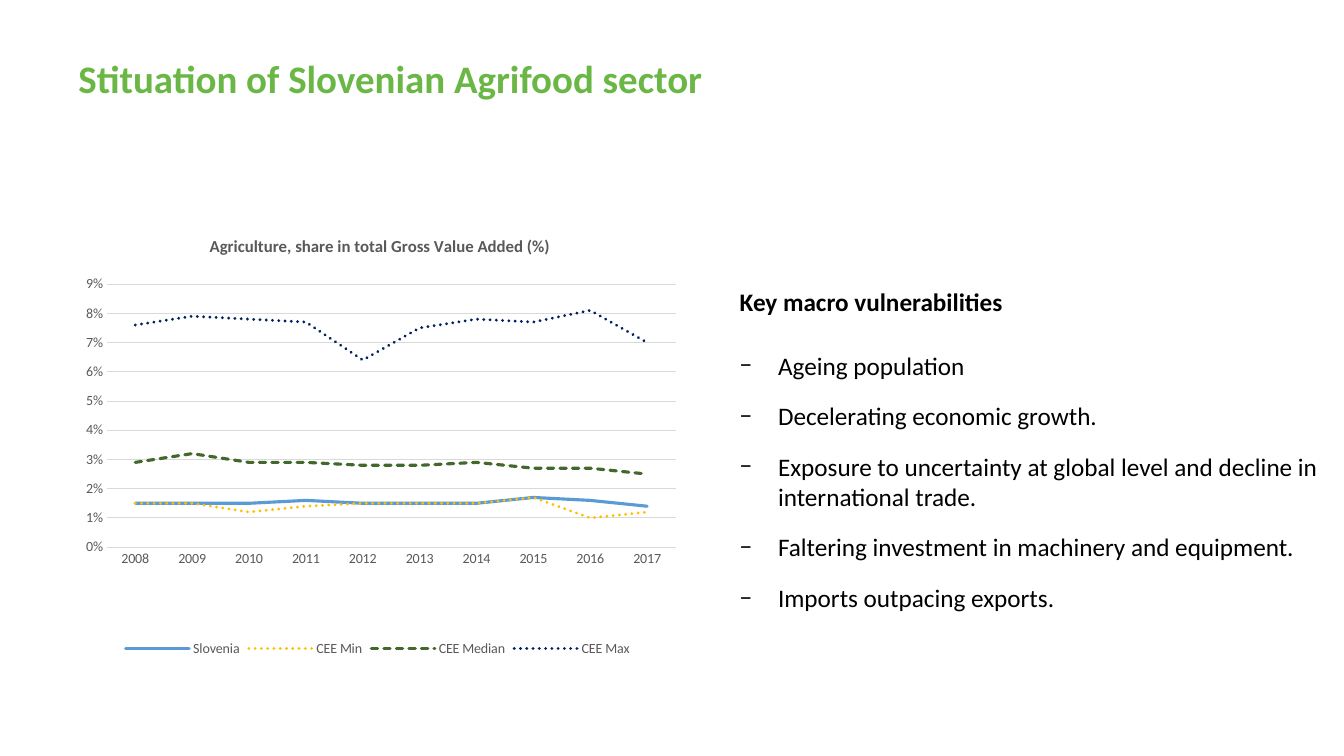
from lxml.etree import SubElement
from pptx import Presentation
from pptx.chart.data import CategoryChartData
from pptx.dml.color import RGBColor
from pptx.enum.chart import XL_CHART_TYPE, XL_LEGEND_POSITION, XL_TICK_MARK
from pptx.enum.dml import MSO_LINE
from pptx.enum.text import MSO_ANCHOR
from pptx.oxml import parse_xml
from pptx.oxml.ns import nsdecls, qn
from pptx.util import Inches, Pt

GREEN = RGBColor(0x6B, 0xB7, 0x45)
BLACK = RGBColor(0, 0, 0)
GREY = RGBColor(0x59, 0x59, 0x59)
RULE = RGBColor(0xD9, 0xD9, 0xD9)
BLUE = RGBColor(0x5B, 0x9B, 0xD5)
AMBER = RGBColor(0xFF, 0xC0, 0x00)
FOREST = RGBColor(0x43, 0x68, 0x2B)
NAVY = RGBColor(0x00, 0x20, 0x60)

YEARS = [str(year) for year in range(2008, 2018)]
SERIES = [
    ("Slovenia", BLUE, None,
     [0.015, 0.015, 0.015, 0.016, 0.015, 0.015, 0.015, 0.017, 0.016, 0.014]),
    ("CEE Min", AMBER, MSO_LINE.ROUND_DOT,
     [0.015, 0.015, 0.012, 0.014, 0.015, 0.015, 0.015, 0.017, 0.01, 0.012]),
    ("CEE Median", FOREST, MSO_LINE.SQUARE_DOT,
     [0.029, 0.032, 0.029, 0.029, 0.028, 0.028, 0.029, 0.027, 0.027, 0.025]),
    ("CEE Max", NAVY, MSO_LINE.ROUND_DOT,
     [0.076, 0.079, 0.078, 0.077, 0.064, 0.075, 0.078, 0.077, 0.081, 0.07]),
]
VULNERABILITIES = [
    "Ageing population",
    "Decelerating economic growth.",
    "Exposure to uncertainty at global level and decline in international trade.",
    "Faltering investment in machinery and equipment.",
    "Imports outpacing exports.",
]


def style_font(font, size, color, bold=False):
    font.name = "Calibri"
    font.size = Pt(size)
    font.color.rgb = color
    font.bold = bold


def write(para, text, size=18, color=BLACK, bold=False, line=1.0, before=0, bullet=None):
    para.line_spacing = line
    para.space_before = Pt(before)
    if bullet:
        properties = para._p.get_or_add_pPr()
        properties.set("marL", str(Inches(0.38)))
        properties.set("indent", str(-Inches(0.38)))
        SubElement(properties, qn("a:buFont")).set("typeface", "Calibri")
        SubElement(properties, qn("a:buChar")).set("char", bullet)
    span = para.add_run()
    span.text = text
    style_font(span.font, size, color, bold)


def manual_layout(**shares):
    modes = "".join(f'<c:{axis}Mode val="edge"/>' for axis in "xy")
    values = "".join(f'<c:{key} val="{value}"/>' for key, value in shares.items())
    target = '<c:layoutTarget val="inner"/>' if "w" in shares else ""
    return parse_xml(f'<c:layout {nsdecls("c")}><c:manualLayout>'
                     f'{target}{modes}{values}</c:manualLayout></c:layout>')


class SlideBuilder:
    def __init__(self, deck):
        self.width, self.height = deck.slide_width, deck.slide_height
        self.page = deck.slides.add_slide(deck.slide_layouts[6])

    def place(self, left, top, width, height):
        return (int(left * self.width), int(top * self.height),
                int(width * self.width), int(height * self.height))

    def text(self, area, paragraphs, anchor=MSO_ANCHOR.TOP):
        frame = self.page.shapes.add_textbox(*self.place(*area)).text_frame
        frame.word_wrap = True
        frame.vertical_anchor = anchor
        for index, (text, options) in enumerate(paragraphs):
            para = frame.add_paragraph() if index else frame.paragraphs[0]
            write(para, text, **options)

    def line_chart(self, area, title, categories, series):
        data = CategoryChartData(number_format="0%")
        data.categories = categories
        for name, _, _, values in series:
            data.add_series(name, values)
        chart = self.page.shapes.add_chart(
            XL_CHART_TYPE.LINE, *self.place(*area), data).chart
        style_font(chart.font, 10, BLACK)
        self.chart_title(chart, title)
        self.axes(chart)
        chart.has_legend = True
        chart.legend.position = XL_LEGEND_POSITION.BOTTOM
        chart.legend.include_in_layout = False
        style_font(chart.legend.font, 10, GREY)
        plot = chart.plots[0]
        plot.vary_by_categories = False
        for line, (_, color, dash, _) in zip(plot.series, series):
            line.smooth = False
            line.format.line.color.rgb = color
            line.format.line.width = Pt(2.25)
            if dash:
                line.format.line.dash_style = dash
        for outline in chart.element.xpath(".//c:ser/c:spPr/a:ln"):
            outline.set("cap", "rnd")
        plot_area = chart.element.xpath(".//c:plotArea")[0]
        for layout in plot_area.findall(qn("c:layout")):
            plot_area.remove(layout)
        plot_area.insert(0, manual_layout(x=0.082, y=0.157, w=0.878, h=0.589))

    def chart_title(self, chart, title):
        chart.has_title = True
        write(chart.chart_title.text_frame.paragraphs[0], title,
              size=12, color=GREY, bold=True)
        element = chart.element.xpath(".//c:title")[0]
        for layout in element.findall(qn("c:layout")):
            element.remove(layout)
        element.find(qn("c:tx")).addnext(manual_layout(x=0.236, y=0.04))

    def axes(self, chart):
        for axis in (chart.category_axis, chart.value_axis):
            axis.major_tick_mark = axis.minor_tick_mark = XL_TICK_MARK.NONE
            style_font(axis.tick_labels.font, 10, GREY)
        years, shares = chart.category_axis, chart.value_axis
        shares.minimum_scale, shares.maximum_scale = 0, 0.09
        shares.major_unit = 0.01
        shares.tick_labels.number_format = "0%"
        shares.tick_labels.number_format_is_linked = False
        shares.format.line.fill.background()
        for rule in (years.format.line, shares.major_gridlines.format.line):
            rule.color.rgb = RULE
            rule.width = Pt(0.75)


def main():
    deck = Presentation()
    deck.slide_width, deck.slide_height = Inches(13.33), Inches(7.5)
    slide = SlideBuilder(deck)
    slide.text((0.051, 0.079, 0.685, 0.063),
               [("Stituation of Slovenian Agrifood sector",
                 dict(size=27.8, color=GREEN, bold=True, line=0.7))],
               anchor=MSO_ANCHOR.MIDDLE)
    bullets = [(text, dict(bullet="−", before=14.5 if index else 24))
               for index, text in enumerate(VULNERABILITIES)]
    slide.text((0.543, 0.369, 0.457, 0.452),
               [("Key macro vulnerabilities", dict(bold=True, line=1.07)), *bullets])
    slide.line_chart((0.04, 0.283, 0.482, 0.591),
                     "Agriculture, share in total Gross Value Added (%)", YEARS, SERIES)
    deck.save("out.pptx")


if __name__ == "__main__":
    main()
